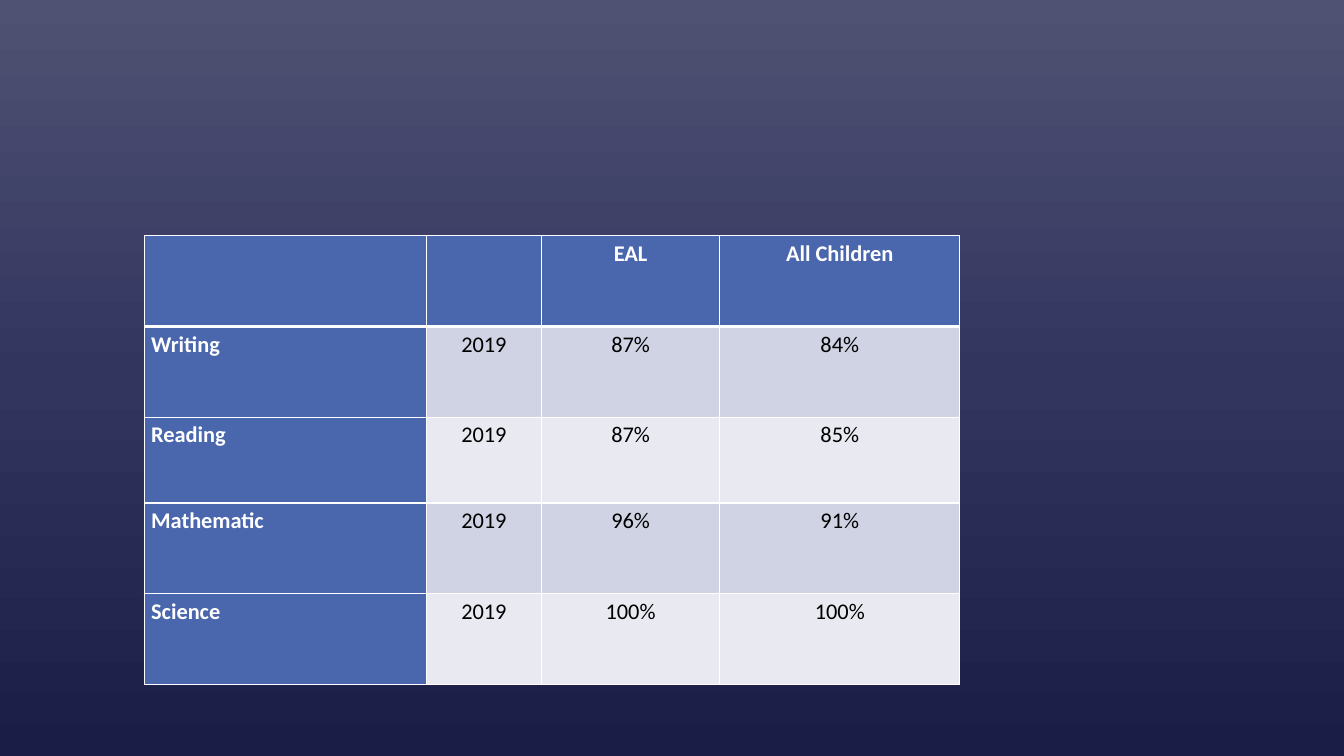
from copy import deepcopy

from lxml import etree
from pptx import Presentation
from pptx.dml.color import RGBColor
from pptx.enum.text import PP_ALIGN
from pptx.oxml.ns import qn
from pptx.util import Inches, Pt

LEFT, CENTER = PP_ALIGN.LEFT, PP_ALIGN.CENTER
BLANK = 6

COLORS = {
    "head": "4A66AC",
    "odd": "D0D3E3",
    "even": "E9EAF1",
    "line": "FFFFFF",
    "light": "FFFFFF",
    "dark": "000000",
}
SHADES = [(0, "505273"), (0.5, "32355E"), (1, "1A1E47")]

RESULTS = [
    ["", "", "EAL", "All Children"],
    ["Writing", "2019", "87%", "84%"],
    ["Reading", "2019", "87%", "85%"],
    ["Mathematic", "2019", "96%", "91%"],
    ["Science", "2019", "100%", "100%"],
]
BOX = (1.43, 2.34, 8.09, 4.45)
WIDTHS = [2.8, 1.14, 1.77, 2.38]
HEIGHTS = [0.9, 0.9, 0.85, 0.9, 0.9]
MARGINS = {
    "margin_left": Inches(0.07),
    "margin_right": Inches(0.07),
    "margin_top": 0,
    "margin_bottom": 0,
}


def color(name):
    return RGBColor.from_string(COLORS[name])


def assign(item, values):
    for name, value in values.items():
        setattr(item, name, value)


def paint_back(slide):
    """Fill the background with a three-stop gradient, top to bottom."""
    fill = slide.background.fill
    fill.gradient()
    fill.gradient_angle = 270
    stops = slide.element.find(".//" + qn("a:gsLst"))
    stops.append(deepcopy(stops[0]))
    for stop, (place, shade) in zip(fill.gradient_stops, SHADES):
        stop.position = place
        stop.color.rgb = RGBColor.from_string(shade)


def add_borders(cell, row):
    """Draw thin lines, with a thick one under the header row."""
    widths = {
        "a:lnL": 1,
        "a:lnR": 1,
        "a:lnT": 3 if row == 1 else 1,
        "a:lnB": 3 if row == 0 else 1,
    }
    props = cell._tc.get_or_add_tcPr()
    for tag, width in widths.items():
        line = etree.SubElement(props, qn(tag), w=str(Pt(width)))
        solid = etree.SubElement(line, qn("a:solidFill"))
        etree.SubElement(solid, qn("a:srgbClr"), val=COLORS["line"])


def format_cell(cell, row, col, text):
    head = row == 0 or col == 0
    band = "odd" if row % 2 else "even"
    add_borders(cell, row)
    cell.fill.solid()
    cell.fill.fore_color.rgb = color("head" if head else band)
    assign(cell, MARGINS)
    cell.text = text
    para = cell.text_frame.paragraphs[0]
    assign(para, {
        "alignment": CENTER if col else LEFT,
        "line_spacing": 1.15,
    })
    assign(para.font, {"name": "Calibri", "size": Pt(16), "bold": head})
    para.font.color.rgb = color("light" if head else "dark")


def add_results(slide, box):
    frame = slide.shapes.add_table(
        len(HEIGHTS), len(WIDTHS), *map(Inches, box))
    table = frame.table
    for column, width in zip(table.columns, WIDTHS):
        column.width = Inches(width)
    for line, height in zip(table.rows, HEIGHTS):
        line.height = Inches(height)
    for row, texts in enumerate(RESULTS):
        for col, text in enumerate(texts):
            format_cell(table.cell(row, col), row, col, text)


def main():
    deck = Presentation()
    deck.slide_width, deck.slide_height = Inches(13.33), Inches(7.5)
    slide = deck.slides.add_slide(deck.slide_layouts[BLANK])
    paint_back(slide)
    add_results(slide, BOX)
    deck.save("out.pptx")


if __name__ == "__main__":
    main()
